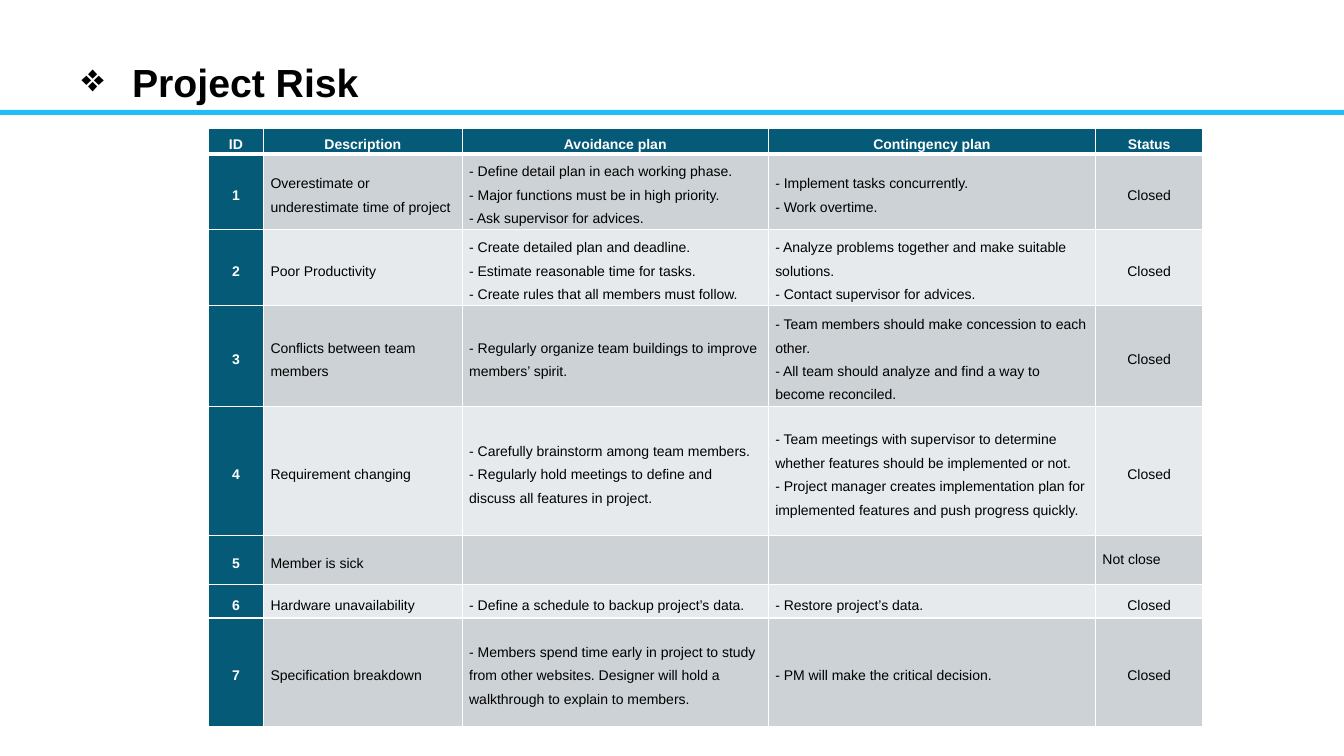
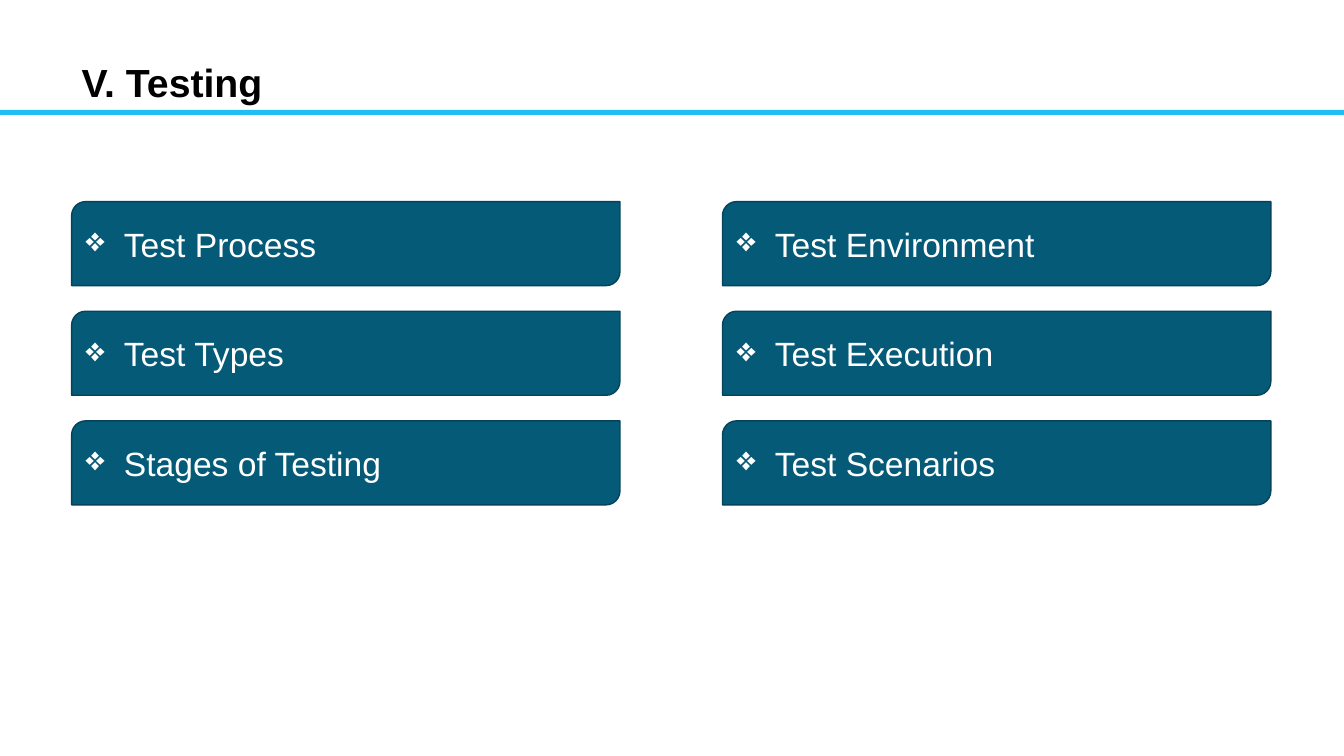
from pptx import Presentation
from pptx.dml.color import RGBColor
from pptx.enum.shapes import MSO_SHAPE
from pptx.enum.text import MSO_ANCHOR, MSO_AUTO_SIZE, PP_ALIGN
from pptx.oxml.ns import qn
from pptx.util import Inches, Pt
from lxml import etree

TEAL = RGBColor(0x05, 0x5A, 0x78)
EDGE = RGBColor(0x04, 0x43, 0x59)
SKY = RGBColor(0x21, 0xBE, 0xF6)
DARK = RGBColor(0xCC, 0xD2, 0xD6)
PALE = RGBColor(0xE7, 0xEA, 0xEC)
WHITE = RGBColor(0xFF, 0xFF, 0xFF)
BLACK = RGBColor(0, 0, 0)
LEFT, MID = PP_ALIGN.LEFT, PP_ALIGN.CENTER
TOP, CENTER = MSO_ANCHOR.TOP, MSO_ANCHOR.MIDDLE
GROW = MSO_AUTO_SIZE.SHAPE_TO_FIT_TEXT
RECT, DIAG = MSO_SHAPE.RECTANGLE, MSO_SHAPE.ROUND_2_DIAG_RECTANGLE

deck = Presentation()
deck.slide_width, deck.slide_height = Inches(13.33), Inches(7.5)
W, H = deck.slide_width, deck.slide_height
EDGE_X = 5.33 * W / 100


def write(frame, lines, size, color, bold=False, align=LEFT, space=1.0, hang=0):
    for i, line in enumerate(lines):
        para = frame.add_paragraph() if i else frame.paragraphs[0]
        para.alignment = align
        para.line_spacing = space
        if hang:
            props = para._p.get_or_add_pPr()
            props.set("marL", str(Inches(hang)))
            props.set("indent", str(-Inches(hang)))
            etree.SubElement(props, qn("a:buChar")).set("char", "❖")
        run = para.add_run()
        run.text = line
        run.font.name = "Arial"
        run.font.size = Pt(size)
        run.font.bold = bold
        run.font.color.rgb = color


def rule(cell, side, width):
    line = etree.SubElement(cell._tc.get_or_add_tcPr(), qn("a:" + side))
    line.set("w", str(Pt(width)))
    fill = etree.SubElement(line, qn("a:solidFill"))
    etree.SubElement(fill, qn("a:srgbClr")).set("val", str(WHITE))


slides = []
for name, share, hang in [("Project Risk", 0.44, 0.5), ("V. Testing", 0.62, 0)]:
    slide = deck.slides.add_slide(deck.slide_layouts[5])
    band = slide.shapes.add_shape(RECT, 0, int(14.53 * H / 100), W, int(0.67 * H / 100))
    band.shadow.inherit = False
    band.fill.solid()
    band.fill.fore_color.rgb = SKY
    band.line.fill.background()
    title = slide.shapes.title
    title.left, title.top = int(EDGE_X), int(7.07 * H / 100)
    title.width, title.height = int(share * W), int(7.6 * H / 100)
    frame = title.text_frame
    frame.word_wrap = True
    frame.auto_size = GROW
    frame.vertical_anchor = TOP
    write(frame, [name], 28, BLACK, bold=True, hang=hang)
    slides.append(slide)
risk, test = slides

HEADS = ["ID", "Description", "Avoidance plan", "Contingency plan", "Status"]
RISKS = [
    ("Overestimate or underestimate time of project",
     ["- Define detail plan in each working phase.",
      "- Major functions must be in high priority.",
      "- Ask supervisor for advices."],
     ["- Implement tasks concurrently.", "- Work overtime."], "Closed"),
    ("Poor Productivity",
     ["- Create detailed plan and deadline.",
      "- Estimate reasonable time for tasks.",
      "- Create rules that all members must follow."],
     ["- Analyze problems together and make suitable solutions.",
      "- Contact supervisor for advices."], "Closed"),
    ("Conflicts between team members",
     ["- Regularly organize team buildings to improve members’ spirit."],
     ["- Team members should make concession to each other.",
      "- All team should analyze and find a way to become reconciled."], "Closed"),
    ("Requirement changing",
     ["- Carefully brainstorm among team members.",
      "- Regularly hold meetings to define and discuss all features in project."],
     ["- Team meetings with supervisor to determine whether features should be "
      "implemented or not.",
      "- Project manager creates implementation plan for implemented features and "
      "push progress quickly."], "Closed"),
    ("Member is sick", [], [], "Not close"),
    ("Hardware unavailability",
     ["- Define a schedule to backup project’s data."],
     ["- Restore project’s data."], "Closed"),
    ("Specification breakdown",
     ["- Members spend time early in project to study from other websites. "
      "Designer will hold a walkthrough to explain to members."],
     ["- PM will make the critical decision."], "Closed"),
]
COLS = [0.55, 1.98, 3.05, 3.26, 1.07]
ROWS = [0.25, 0.75, 0.75, 1.01, 1.28, 0.49, 0.33, 1.08]

rows = [[[head] for head in HEADS]]
for num, (what, avoid, plan, state) in enumerate(RISKS, 1):
    rows.append([[str(num)], [what], avoid, plan, [state]])

wide, high = 0.74 * W, 0.79 * H
grid = risk.shapes.add_table(len(rows), len(HEADS), int(15.5 * W / 100),
                             int(0.17 * H), int(wide), int(high)).table
grid.horz_banding = False
for col, part in zip(grid.columns, COLS):
    col.width = int(wide * part / sum(COLS))
for row, part in zip(grid.rows, ROWS):
    row.height = int(high * part / sum(ROWS))

for r, row in enumerate(rows):
    for c, lines in enumerate(row):
        cell = grid.cell(r, c)
        key = r == 0 or c == 0
        loose = lines == ["Not close"]
        cell.margin_left = cell.margin_right = Inches(0.07)
        cell.margin_top = cell.margin_bottom = 0
        cell.vertical_anchor = CENTER
        rule(cell, "lnL", 1)
        rule(cell, "lnR", 1)
        rule(cell, "lnT", 3 if r == 1 else 1)
        rule(cell, "lnB", 3 if r == 0 else 1)
        cell.fill.solid()
        cell.fill.fore_color.rgb = TEAL if key else DARK if r % 2 else PALE
        write(cell.text_frame, lines, 10, WHITE if key else BLACK, bold=key,
              align=MID if key or c == 4 and not loose else LEFT,
              space=1.0 if loose else 1.5)

TOPICS = [
    ["Test Process", "Test Types", "Stages of Testing"],
    ["Test Environment", "Test Execution", "Test Scenarios"],
]
card_w, card_h = 40.8 * W / 100, H / 9
step_x, step_y = 48.43 * W / 100, 14.5 * H / 100
for c, names in enumerate(TOPICS):
    for r, name in enumerate(names):
        card = test.shapes.add_shape(DIAG, int(EDGE_X + c * step_x),
                                     int(26.67 * H / 100 + r * step_y),
                                     int(card_w), int(card_h))
        card.shadow.inherit = False
        card.fill.solid()
        card.fill.fore_color.rgb = TEAL
        card.line.color.rgb = EDGE
        card.line.width = Pt(1)
        card.text_frame.word_wrap = True
        card.text_frame.vertical_anchor = CENTER
        write(card.text_frame, [name], 24, WHITE, hang=0.38)

deck.save("out.pptx")
